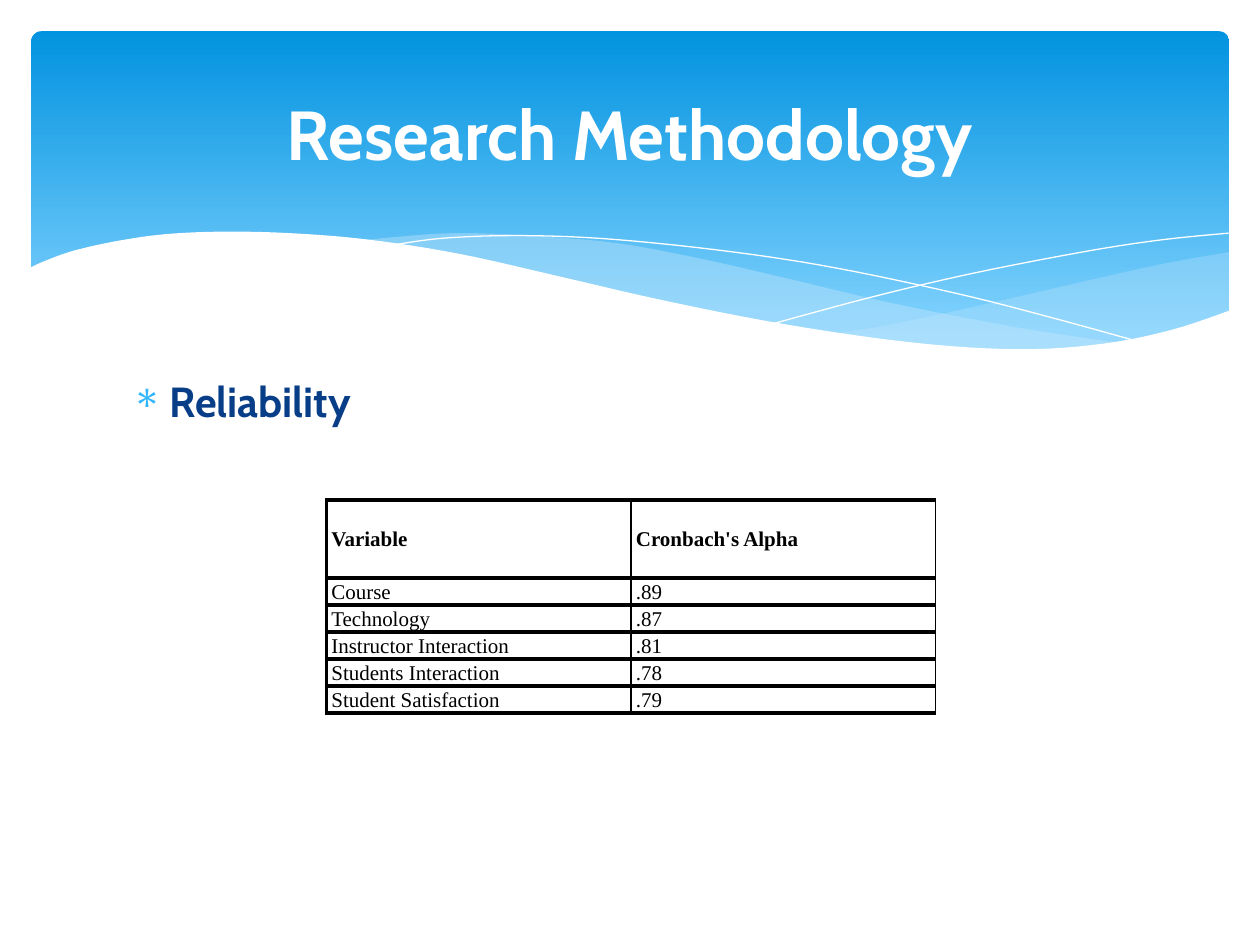
from lxml.etree import SubElement
from pptx import Presentation
from pptx.dml.color import RGBColor
from pptx.enum.shapes import MSO_SHAPE as Preset
from pptx.enum.text import MSO_ANCHOR as Anchor, PP_ALIGN as Align
from pptx.oxml.ns import qn
from pptx.util import Cm, Pt

COLORS = {
    "sky": "0293E0", "sky_light": "83D3FE", "wave": "C6E7FC", "white": "FFFFFF",
    "navy": "073E87", "bullet": "31B6FD", "black": "000000",
}
TITLE = "Research Methodology"
TOPIC = "Reliability"
BULLET = "∗"
ROWS = [
    ("Variable", "Cronbach's Alpha"),
    ("Course", ".89"),
    ("Technology", ".87"),
    ("Instructor Interaction", ".81"),
    ("Students Interaction", ".78"),
    ("Student Satisfaction", ".79"),
]
ROW_HEIGHTS = [1.57] + [0.41] * (len(ROWS) - 1)
COLUMN_WIDTH = 6.14
HEAVY, THIN = 2.25, 1

FONTS = {
    "title": {"name": "Cabin", "size": Pt(39.6), "bold": True, "color": "white"},
    "topic": {"name": "Cabin", "size": Pt(24), "bold": True, "color": "navy"},
    "header": {"name": "Times New Roman", "size": Pt(12), "bold": True, "color": "black"},
    "cell": {"name": "Times New Roman", "size": Pt(12), "bold": False, "color": "black"},
}

WAVES = [
    {"fill": "wave", "opacity": 29, "edges": [
        [(24.78, 5.08), (23.4, 5.33), (21.87, 5.67), (19.79, 6.15), (17.93, 6.55), (16.79, 6.73)],
        [(16.79, 6.73), (18.59, 6.96), (20.4, 7.06), (21.92, 7.01), (23.19, 6.78), (24.1, 6.53),
         (24.78, 6.27)],
    ]},
    {"fill": "wave", "opacity": 40, "edges": [
        [(22.68, 6.93), (20.5, 6.6), (17.93, 6.1), (15.98, 5.64), (14.1, 5.21), (12.42, 4.9),
         (10.67, 4.75), (9.17, 4.7), (7.95, 4.78), (7.26, 4.85)],
        [(7.26, 4.85), (9.19, 5.16), (11.4, 5.64), (14.38, 6.3), (16.51, 6.71), (18.34, 6.96),
         (19.94, 7.06), (21.54, 7.04), (22.68, 6.93)],
    ]},
    {"line": "white", "edges": [
        [(7.85, 4.95), (8.97, 4.8), (10.57, 4.75), (12.42, 4.83), (14.78, 5.08), (16.89, 5.41),
         (19.3, 5.92), (21.11, 6.38), (23.04, 6.91)],
    ]},
    {"line": "white", "edges": [
        [(15.57, 6.53), (17.65, 5.97), (19.71, 5.49), (22, 5.05), (23.47, 4.83), (24.77, 4.7)],
    ]},
    {"fill": "white", "edges": [
        [(24.82, 6.25), (23.62, 6.65), (22.23, 6.93), (20.55, 7.04), (18.44, 6.91), (15.9, 6.55),
         (13.44, 6.07), (11.35, 5.59), (9.27, 5.12), (7.42, 4.83), (5.84, 4.7), (4.5, 4.67),
         (3.35, 4.72), (2.41, 4.85), (1.5, 5.05), (0.91, 5.26), (0.58, 5.41)],
        [(0.58, 8.36), (24.82, 8.36)],
    ]},
]


def set_font(run, style):
    for name, value in FONTS[style].items():
        if name == "color":
            run.font.color.rgb = RGBColor.from_string(COLORS[value])
        else:
            setattr(run.font, name, value)


def smooth(points, steps=6):
    padded = [points[0], *points, points[-1]]
    curve = [points[0]]
    for a, b, c, d in zip(padded, padded[1:], padded[2:], padded[3:]):
        for step in range(1, steps + 1):
            t = step / steps
            curve.append(tuple(
                q + t * (r - p) / 2 + t**2 * (2 * p - 5 * q + 4 * r - s) / 2
                + t**3 * (3 * q - p - 3 * r + s) / 2
                for p, q, r, s in zip(a, b, c, d)))
    return curve


def add_wave(slide, wave):
    points = [(Cm(x), Cm(y)) for edge in wave["edges"] for x, y in smooth(edge)]
    builder = slide.shapes.build_freeform(*points[0])
    builder.add_line_segments(points[1:], close="fill" in wave)
    shape = builder.convert_to_shape()
    shape.shadow.inherit = False
    if "fill" in wave:
        shape.fill.solid()
        shape.fill.fore_color.rgb = RGBColor.from_string(COLORS[wave["fill"]])
        shape.line.fill.background()
        if "opacity" in wave:
            color = shape.fill._xPr.find(f".//{qn('a:srgbClr')}")
            SubElement(color, qn("a:alpha"), val=str(wave["opacity"] * 1000))
    else:
        shape.fill.background()
        shape.line.color.rgb = RGBColor.from_string(COLORS[wave["line"]])
        shape.line.width = Pt(0)


def add_banner(slide):
    banner = slide.shapes.add_shape(
        Preset.ROUNDED_RECTANGLE, Cm(0.63), Cm(0.63), Cm(24.15), Cm(6.86))
    banner.adjustments[0] = 0.03
    banner.shadow.inherit = False
    banner.line.fill.background()
    banner.fill.gradient()
    banner.fill.gradient_angle = 270
    for stop, position, color in zip(banner.fill.gradient_stops, (0, 0.9), ("sky", "sky_light")):
        stop.position = position
        stop.color.rgb = RGBColor.from_string(COLORS[color])


def add_text(slide, text, box, style, anchor, align):
    frame = slide.shapes.add_textbox(*map(Cm, box)).text_frame
    frame.word_wrap = True
    frame.vertical_anchor = anchor
    paragraph = frame.paragraphs[0]
    paragraph.alignment = align
    run = paragraph.add_run()
    run.text = text
    set_font(run, style)
    return paragraph


def add_bullet(paragraph):
    properties = paragraph._p.get_or_add_pPr()
    properties.set("marL", str(Cm(0.76)))
    properties.set("indent", str(-Cm(0.76)))
    color = SubElement(properties, qn("a:buClr"))
    SubElement(color, qn("a:srgbClr"), val=COLORS["bullet"])
    SubElement(properties, qn("a:buChar"), char=BULLET)


def set_borders(cell, widths):
    properties = cell._tc.get_or_add_tcPr()
    for side, width in widths.items():
        line = SubElement(properties, qn(f"a:ln{side}"), w=str(Pt(width)))
        fill = SubElement(line, qn("a:solidFill"))
        SubElement(fill, qn("a:srgbClr"), val=COLORS["black"])


def add_reliability_table(slide):
    columns = len(ROWS[0])
    table = slide.shapes.add_table(
        len(ROWS), columns, Cm(6.58), Cm(10.08),
        Cm(COLUMN_WIDTH * columns), Cm(sum(ROW_HEIGHTS))).table
    table.first_row = table.horz_banding = False
    for column in table.columns:
        column.width = Cm(COLUMN_WIDTH)
    for row_index, (values, height) in enumerate(zip(ROWS, ROW_HEIGHTS)):
        table.rows[row_index].height = Cm(height)
        for column_index, value in enumerate(values):
            cell = table.cell(row_index, column_index)
            left = THIN if column_index else HEAVY
            set_borders(cell, {"L": left, "R": THIN, "T": HEAVY, "B": HEAVY})
            cell.fill.solid()
            cell.fill.fore_color.rgb = RGBColor.from_string(COLORS["white"])
            cell.vertical_anchor = Anchor.MIDDLE
            for side in ("left", "right", "top", "bottom"):
                setattr(cell, f"margin_{side}", 0)
            paragraph = cell.text_frame.paragraphs[0]
            paragraph.alignment = Align.JUSTIFY
            paragraph.line_spacing = 1.07
            paragraph._p.get_or_add_pPr().set("marL", str(Cm(0.1)))
            run = paragraph.add_run()
            run.text = value
            set_font(run, "cell" if row_index else "header")


def main():
    presentation = Presentation()
    presentation.slide_width, presentation.slide_height = Cm(25.4), Cm(19.05)
    slide = presentation.slides.add_slide(presentation.slide_layouts[6])
    add_banner(slide)
    for wave in WAVES:
        add_wave(slide, wave)
    topic = add_text(slide, TOPIC, (2.41, 7.44, 20.57, 9.58), "topic", Anchor.TOP, Align.LEFT)
    add_bullet(topic)
    add_text(slide, TITLE, (1.27, 0.94, 22.86, 3.48), "title", Anchor.MIDDLE, Align.CENTER)
    add_reliability_table(slide)
    presentation.save("out.pptx")


if __name__ == "__main__":
    main()
